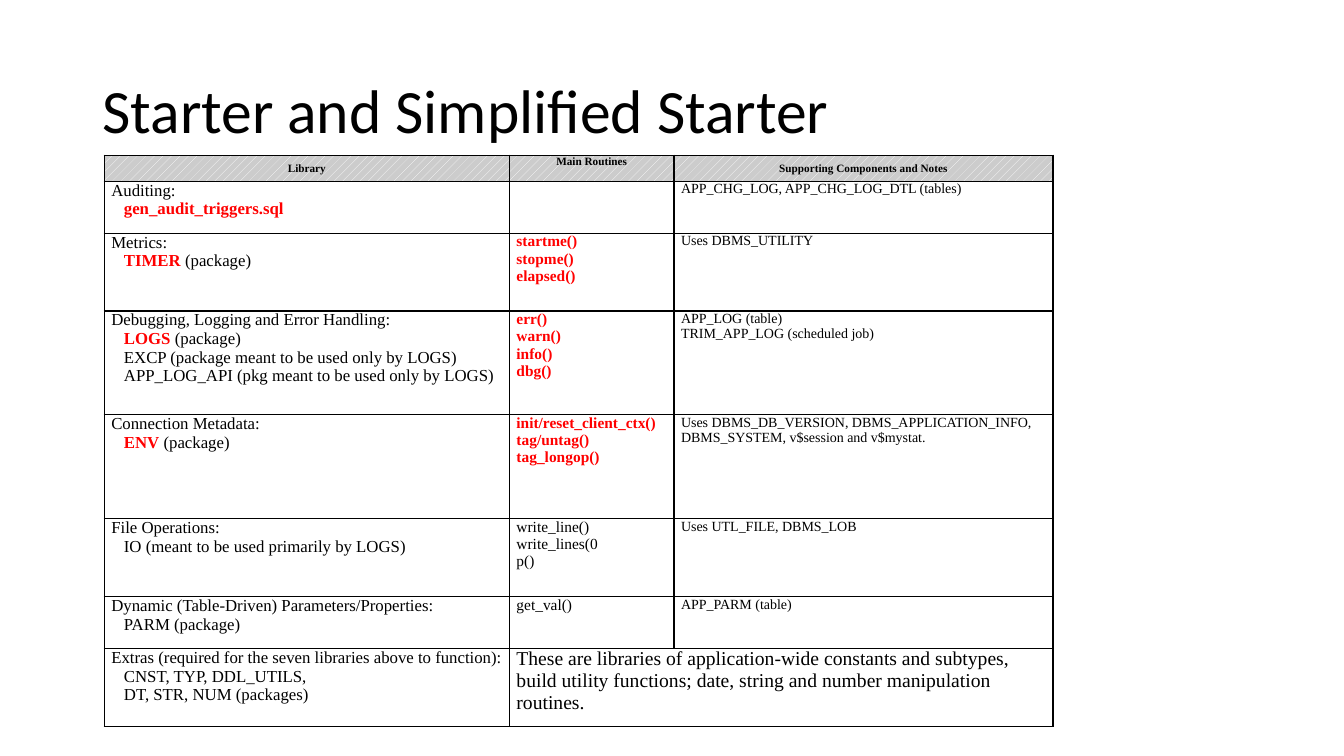
from dataclasses import dataclass

from lxml import etree
from pptx import Presentation
from pptx.dml.color import RGBColor
from pptx.enum.dml import MSO_PATTERN
from pptx.enum.text import MSO_ANCHOR, MSO_AUTO_SIZE, PP_ALIGN
from pptx.oxml.ns import qn
from pptx.slide import Slide
from pptx.table import Table, _Cell
from pptx.text.text import TextFrame, _Paragraph
from pptx.util import Pt

TOP, MIDDLE = MSO_ANCHOR.TOP, MSO_ANCHOR.MIDDLE
LEFT, CENTER = PP_ALIGN.LEFT, PP_ALIGN.CENTER
NO_AUTOFIT = MSO_AUTO_SIZE.NONE
DOTTED = MSO_PATTERN.PERCENT_20

COLORS = {"text": "000000", "key": "FF0000", "header": "CCCCCC", "dots": "FFFFFF", "border": "000000"}
TITLE_FONT, TABLE_FONT = "Calibri", "Times New Roman"
COLUMN_WIDTHS = (289.4, 117.6, 270.7)
COLUMN_SIZES = (12, 11, 10)
HEADER_SIZE, EXTRAS_SIZE = 8, 14
ROW_UNIT = 18.55
MEMBER_INDENT = 9
SIDE_INSET = 5.04


@dataclass(frozen=True)
class Member:
    plain: str = ""
    key: str = ""


@dataclass(frozen=True)
class Library:
    category: str
    members: tuple[Member, ...]
    routines: tuple[str, ...]
    notes: tuple[str, ...]
    units: int
    key_routines: bool = False


HEADERS = (("Library", MIDDLE), ("Main Routines", TOP), ("Supporting Components and Notes", MIDDLE))

LIBRARIES = (
    Library("Auditing:", (Member(key="gen_audit_triggers.sql"),), (),
            ("APP_CHG_LOG, APP_CHG_LOG_DTL (tables)",), 2),
    Library("Metrics:", (Member(" (package)", "TIMER"),),
            ("startme()", "stopme()", "elapsed()"), ("Uses DBMS_UTILITY",), 3, True),
    Library("Debugging, Logging and Error Handling:",
            (Member(" (package)", "LOGS"),
             Member("EXCP (package meant to be used only by LOGS)"),
             Member("APP_LOG_API (pkg meant to be used only by LOGS)")),
            ("err()", "warn()", "info()", "dbg()"),
            ("APP_LOG (table)", "TRIM_APP_LOG (scheduled job)"), 4, True),
    Library("Connection Metadata:", (Member(" (package)", "ENV"),),
            ("init/reset_client_ctx()", "tag/untag()", "tag_longop()"),
            ("Uses DBMS_DB_VERSION, DBMS_APPLICATION_INFO, DBMS_SYSTEM, v$session and v$mystat.",), 4, True),
    Library("File Operations:", (Member("IO (meant to be used primarily by LOGS)"),),
            ("write_line()", "write_lines(0", "p()"), ("Uses UTL_FILE, DBMS_LOB",), 3),
    Library("Dynamic (Table-Driven) Parameters/Properties:", (Member("PARM (package)"),),
            ("get_val()",), ("APP_PARM (table)",), 2),
    Library("Extras (required for the seven libraries above to function):",
            (Member("CNST, TYP, DDL_UTILS,"), Member("DT, STR, NUM (packages)")),
            ("These are libraries of application-wide constants and subtypes, build utility functions; "
             "date, string and number manipulation routines.",), (), 3),
)


def rgb(name: str) -> RGBColor:
    return RGBColor.from_string(COLORS[name])


def add_run(paragraph: _Paragraph, text: str, size: float, color: str = "text",
            bold: bool = False, font: str = TABLE_FONT) -> None:
    run = paragraph.add_run()
    run.text = text
    run.font.name = font
    run.font.size = Pt(size)
    run.font.bold = bold
    run.font.color.rgb = rgb(color)


def next_paragraph(frame: TextFrame) -> _Paragraph:
    first = frame.paragraphs[0]
    return frame.add_paragraph() if first.runs else first


def add_title(slide: Slide) -> None:
    title = slide.shapes.title
    title.left, title.top, title.width, title.height = Pt(66), Pt(28.75), Pt(828), Pt(104.4)
    frame = title.text_frame
    frame.word_wrap = True
    frame.auto_size = NO_AUTOFIT
    frame.vertical_anchor = MIDDLE
    paragraph = frame.paragraphs[0]
    paragraph.alignment = LEFT
    paragraph.line_spacing = 0.9
    add_run(paragraph, "Starter and Simplified Starter", 44, font=TITLE_FONT)


def format_cell(cell: _Cell) -> None:
    cell.margin_left = cell.margin_right = Pt(SIDE_INSET)
    cell.margin_top = cell.margin_bottom = 0
    cell.vertical_anchor = TOP
    properties = cell._tc.get_or_add_tcPr()
    for side in ("lnL", "lnR", "lnT", "lnB"):
        border = etree.SubElement(properties, qn(f"a:{side}"), w=str(Pt(1)))
        fill = etree.SubElement(border, qn("a:solidFill"))
        etree.SubElement(fill, qn("a:srgbClr"), val=COLORS["border"])
    cell.fill.background()


def fill_header(cell: _Cell, heading: str, anchor: MSO_ANCHOR) -> None:
    cell.vertical_anchor = anchor
    cell.fill.patterned()
    cell.fill.pattern = DOTTED
    cell.fill.fore_color.rgb = rgb("dots")
    cell.fill.back_color.rgb = rgb("header")
    paragraph = cell.text_frame.paragraphs[0]
    paragraph.alignment = CENTER
    add_run(paragraph, heading, HEADER_SIZE, bold=True)


def fill_lines(cell: _Cell, lines: tuple[str, ...], size: float, key: bool = False) -> None:
    for line in lines:
        add_run(next_paragraph(cell.text_frame), line, size, "key" if key else "text", key)


def fill_members(cell: _Cell, members: tuple[Member, ...], size: float) -> None:
    for member in members:
        paragraph = next_paragraph(cell.text_frame)
        paragraph._p.get_or_add_pPr().set("indent", str(Pt(MEMBER_INDENT)))
        if member.key:
            add_run(paragraph, member.key, size, "key", True)
        if member.plain:
            add_run(paragraph, member.plain, size)


def fill_library(table: Table, row: int, library: Library) -> None:
    name_size, routine_size, note_size = COLUMN_SIZES
    name, routines, notes = (table.cell(row, column) for column in range(3))
    fill_lines(name, (library.category,), name_size)
    fill_members(name, library.members, name_size)
    if not library.notes:
        routines.merge(notes)
        routine_size = EXTRAS_SIZE
    fill_lines(routines, library.routines, routine_size, library.key_routines)
    fill_lines(notes, library.notes, note_size)


def add_library_table(slide: Slide) -> None:
    row_units = (1, *(library.units for library in LIBRARIES))
    table = slide.shapes.add_table(
        len(row_units), len(COLUMN_WIDTHS), Pt(74.5), Pt(110.9),
        Pt(sum(COLUMN_WIDTHS)), Pt(sum(row_units) * ROW_UNIT)).table
    table.first_row = table.horz_banding = False
    for column, width in zip(table.columns, COLUMN_WIDTHS):
        column.width = Pt(width)
    for row, units in zip(table.rows, row_units):
        row.height = Pt(units * ROW_UNIT)
    for cell in table.iter_cells():
        format_cell(cell)
    for column, (heading, anchor) in enumerate(HEADERS):
        fill_header(table.cell(0, column), heading, anchor)
    for row, library in enumerate(LIBRARIES, start=1):
        fill_library(table, row, library)


def main() -> None:
    deck = Presentation()
    deck.slide_width, deck.slide_height = Pt(960), Pt(540)
    slide = deck.slides.add_slide(deck.slide_layouts[5])
    add_title(slide)
    add_library_table(slide)
    deck.save("out.pptx")


if __name__ == "__main__":
    main()
